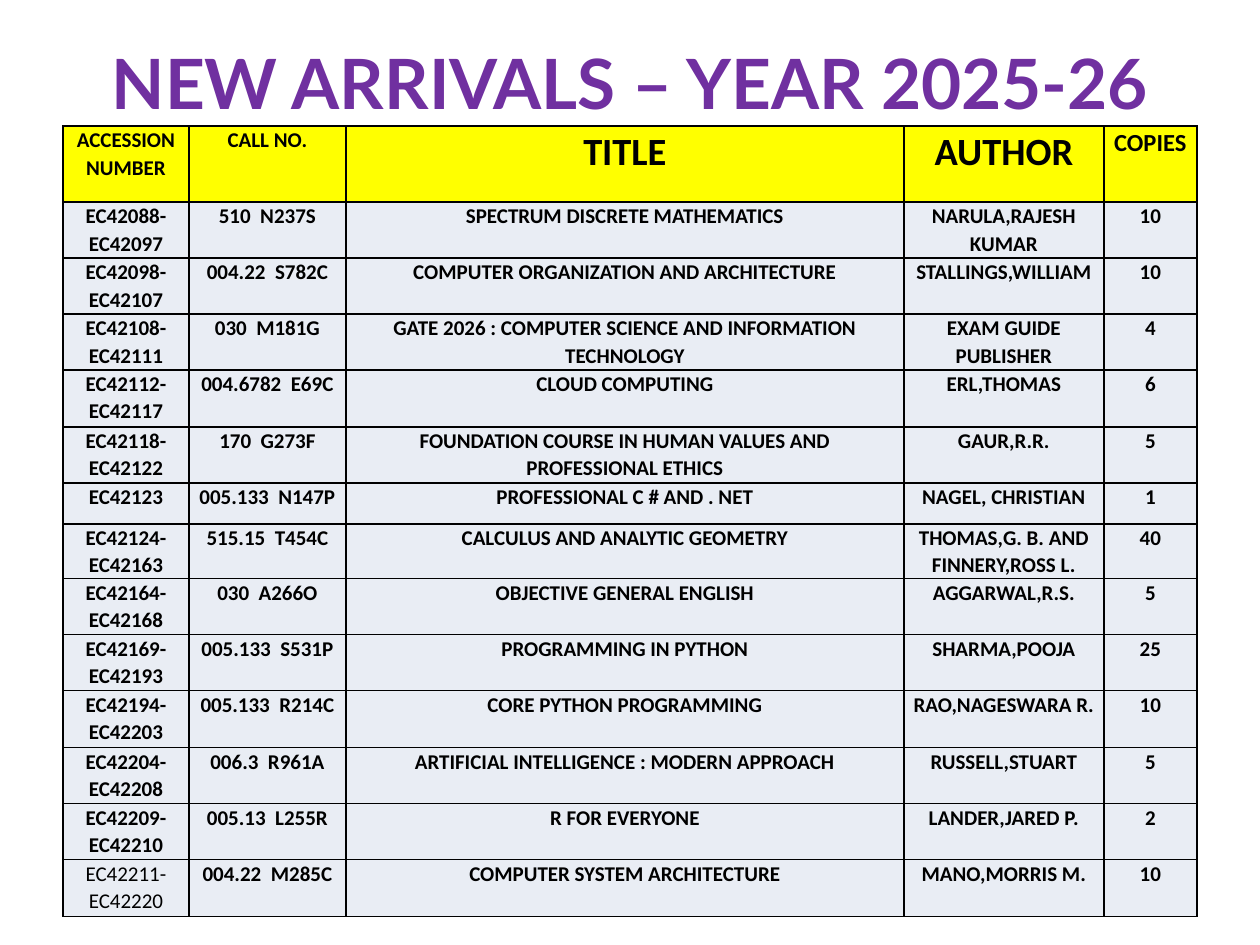
from pptx import Presentation
from pptx.dml.color import RGBColor as RGB
from pptx.enum.text import MSO_ANCHOR as Anchor, MSO_AUTO_SIZE as AutoSize, PP_ALIGN as Align
from pptx.oxml import parse_xml
from pptx.oxml.ns import nsdecls
from pptx.util import Pt

PX = 914400 // 126
PAGE_WIDTH, PAGE_HEIGHT = 1260, 945
LEFT, WIDTH = 63, 1134
COLORS = {"title": "7030A0", "header": "FFFF00", "body": "E9EDF4", "ink": "000000"}

COLUMN_WIDTHS = [126, 157, 558, 200, 93]
ROW_HEIGHTS = [76, 56, 56, 56, 57, 56, 41, 54, 56, 56, 57, 56, 56, 57]
HEADER = ["ACCESSION NUMBER", "CALL NO.", "TITLE", "AUTHOR", "COPIES"]
HEADER_SIZES = [12, 12, 22, 22, 14]
BOOKS = [
    ("EC42088-EC42097", "510  N237S", "SPECTRUM DISCRETE MATHEMATICS", "NARULA,RAJESH KUMAR", 10),
    ("EC42098-EC42107", "004.22  S782C", "COMPUTER ORGANIZATION AND ARCHITECTURE",
     "STALLINGS,WILLIAM", 10),
    ("EC42108-EC42111", "030  M181G",
     "GATE 2026 : COMPUTER SCIENCE AND INFORMATION TECHNOLOGY", "EXAM GUIDE PUBLISHER", 4),
    ("EC42112-EC42117", "004.6782  E69C", "CLOUD COMPUTING", "ERL,THOMAS", 6),
    ("EC42118-EC42122", "170  G273F",
     "FOUNDATION COURSE IN HUMAN VALUES AND PROFESSIONAL ETHICS", "GAUR,R.R.", 5),
    ("EC42123", "005.133  N147P", "PROFESSIONAL C # AND . NET", "NAGEL, CHRISTIAN", 1),
    ("EC42124-EC42163", "515.15  T454C", "CALCULUS AND ANALYTIC GEOMETRY",
     "THOMAS,G. B. AND FINNERY,ROSS L.", 40),
    ("EC42164-EC42168", "030  A266O", "OBJECTIVE GENERAL ENGLISH", "AGGARWAL,R.S.", 5),
    ("EC42169-EC42193", "005.133  S531P", "PROGRAMMING IN PYTHON", "SHARMA,POOJA", 25),
    ("EC42194-EC42203", "005.133  R214C", "CORE PYTHON PROGRAMMING", "RAO,NAGESWARA R.", 10),
    ("EC42204-EC42208", "006.3  R961A", "ARTIFICIAL INTELLIGENCE : MODERN APPROACH",
     "RUSSELL,STUART", 5),
    ("EC42209-EC42210", "005.13  L255R", "R FOR EVERYONE", "LANDER,JARED P.", 2),
    ("EC42211-EC42220", "004.22  M285C", "COMPUTER SYSTEM ARCHITECTURE", "MANO,MORRIS M.", 10),
]


def px(length):
    return length * PX


def format_text(para, font_name, size, color, bold=True):
    para.alignment = Align.CENTER
    for span in para.runs:
        font = span.font
        font.name, font.size, font.bold = font_name, Pt(size), bold
        font.color.rgb = RGB.from_string(COLORS[color])


def add_title(page, text):
    title = page.shapes.title
    title.left, title.top = px(LEFT), px(38)
    title.width, title.height = px(WIDTH), px(88)
    frame = title.text_frame
    frame.text = text
    frame.word_wrap = True
    frame.auto_size = AutoSize.NONE
    frame.vertical_anchor = Anchor.MIDDLE
    format_text(frame.paragraphs[0], "Lato", 39.6, "title")


def add_borders(cell):
    """Draw the four edges; call before filling, as the lines must precede the fill."""
    properties = cell._tc.get_or_add_tcPr()
    for side in "LRTB":
        properties.append(parse_xml(
            f'<a:ln{side} {nsdecls("a")} w="{Pt(1)}"><a:solidFill>'
            f'<a:srgbClr val="{COLORS["ink"]}"/></a:solidFill></a:ln{side}>'))


def fill_cell(cell, text, fill, size=12, bold=True, inset=9):
    cell.margin_left = cell.margin_right = px(inset)
    cell.margin_top = cell.margin_bottom = 0
    add_borders(cell)
    cell.fill.solid()
    cell.fill.fore_color.rgb = RGB.from_string(COLORS[fill])
    cell.text_frame.text = str(text)
    para = cell.text_frame.paragraphs[0]
    para.line_spacing = 1.07
    format_text(para, "Calibri", size, "ink", bold)


def add_book_table(page):
    frame = page.shapes.add_table(len(ROW_HEIGHTS), len(COLUMN_WIDTHS), px(LEFT), px(126),
                                  px(WIDTH), px(sum(ROW_HEIGHTS)))
    table = frame.table
    table.first_row = table.horz_banding = False
    for column, width in zip(table.columns, COLUMN_WIDTHS):
        column.width = px(width)
    for row, height in zip(table.rows, ROW_HEIGHTS):
        row.height = px(height)
    for index, (text, size) in enumerate(zip(HEADER, HEADER_SIZES)):
        fill_cell(table.cell(0, index), text, "header", size)
    for number, book in enumerate(BOOKS, 1):
        last = number == len(BOOKS)
        for index, text in enumerate(book):
            fill_cell(table.cell(number, index), text, "body",
                      bold=not (last and index == 0), inset=8 if last else 9)


def main():
    deck = Presentation()
    deck.slide_width, deck.slide_height = px(PAGE_WIDTH), px(PAGE_HEIGHT)
    page = deck.slides.add_slide(deck.slide_layouts[5])
    add_title(page, "NEW ARRIVALS – YEAR 2025-26")
    add_book_table(page)
    deck.save("out.pptx")


if __name__ == "__main__":
    main()
